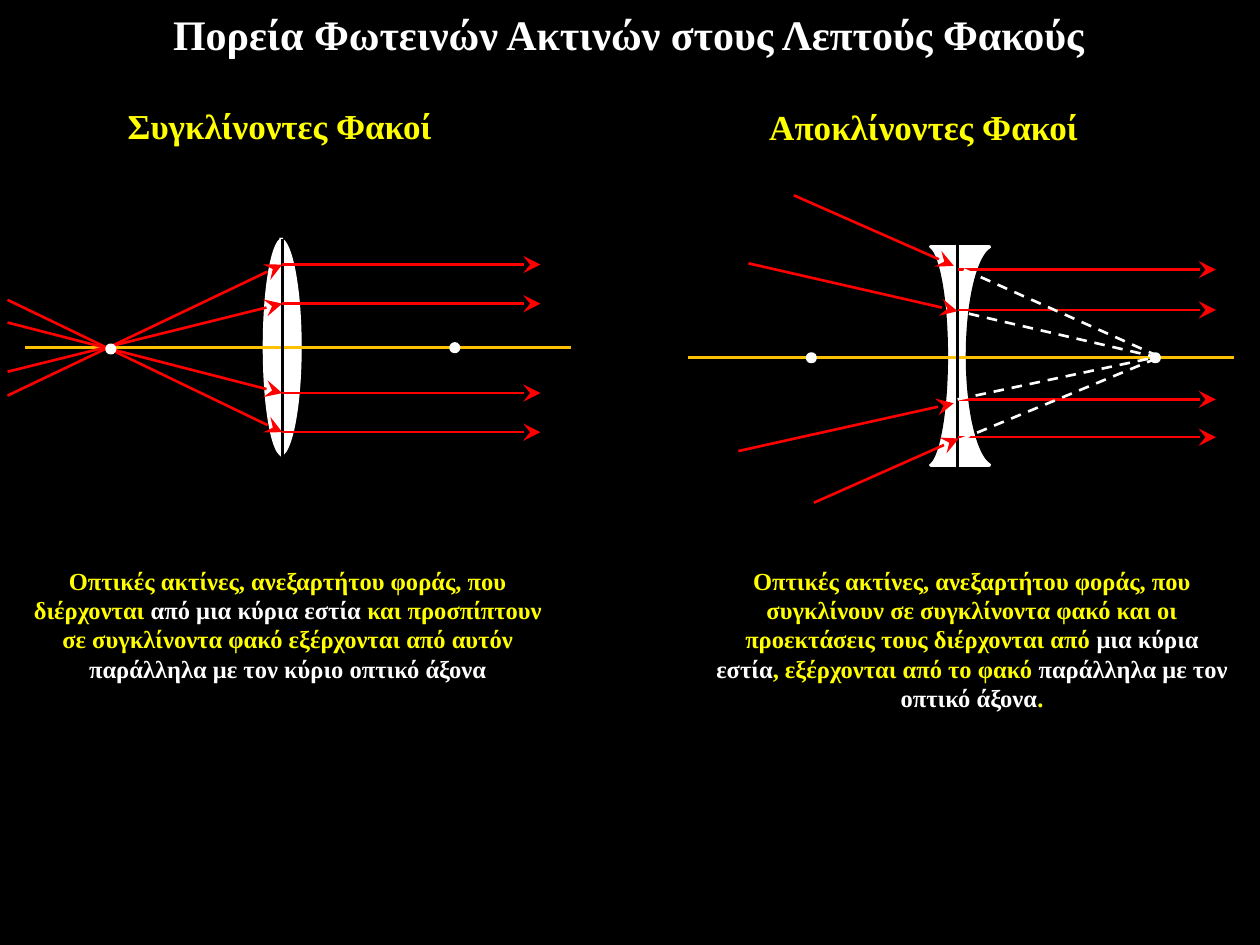
from pptx import Presentation
from pptx.dml.color import RGBColor as Rgb
from pptx.enum.dml import MSO_LINE as Dash
from pptx.enum.shapes import MSO_CONNECTOR as Link, MSO_SHAPE as Kind
from pptx.enum.text import MSO_ANCHOR as Anchor, PP_ALIGN as Align
from pptx.oxml.ns import qn
from pptx.util import Inches, Pt
from lxml.etree import SubElement

HUES = {"black": "000000", "white": "FFFFFF", "yellow": "FFFF00",
        "amber": "FFC000", "red": "FF0000"}
FONT = "Times New Roman"


def hue(name):
    """Return the named colour."""
    return Rgb.from_string(HUES[name])


def write(shape, *runs, size, align=Align.CENTER):
    """Fill a shape with bold (text, colour) runs."""
    frame = shape.text_frame
    frame.word_wrap = True
    frame.vertical_anchor = Anchor.TOP
    para = frame.paragraphs[0]
    para.alignment = align
    for text, color in runs:
        run = para.add_run()
        run.text = text
        font = run.font
        font.name, font.size, font.bold = FONT, Pt(size), True
        font.color.rgb = hue(color)


class Panel:
    """A region of the slide whose parts are placed from its top left corner."""

    def __init__(self, slide, left, top):
        """Keep the slide's shapes and the corner in inches."""
        self.shapes, self.left, self.top = slide.shapes, left, top

    def spot(self, x, y):
        """Turn a point of the panel into slide lengths."""
        return Inches(self.left + x), Inches(self.top + y)

    def label(self, x, y, wide, high, *runs, size):
        """Add a wrapped text box."""
        box = self.shapes.add_textbox(*self.spot(x, y), Inches(wide), Inches(high))
        write(box, *runs, size=size)

    def solid(self, kind, x, y, wide, high, color, line):
        """Add a preset shape in one plain colour."""
        shape = self.shapes.add_shape(kind, *self.spot(x, y), Inches(wide), Inches(high))
        shape.shadow.inherit = False
        shape.fill.solid()
        shape.fill.fore_color.rgb = shape.line.color.rgb = hue(color)
        shape.line.width = Pt(line)
        return shape

    def arc(self, x, y, wide, color, flip=False):
        """Add a filled half ellipse that bulges right, or left if flipped."""
        shape = self.solid(Kind.ARC, x, y, wide, 1.73, color, 0.75)
        shape.adjustments[0], shape.adjustments[1] = 162, 53.74
        if flip:
            shape._element.spPr.find(qn("a:xfrm")).set("flipH", "1")

    def focus(self, x, y):
        """Add a focal point centred on a spot."""
        self.solid(Kind.OVAL, x - 0.03, y - 0.03, 0.06, 0.06, "white", 2)

    def line(self, start, end, color, dash=False, tip=False):
        """Add a straight line, with an arrow tip at its start if asked."""
        link = self.shapes.add_connector(
            Link.STRAIGHT, *self.spot(*start), *self.spot(*end))
        link.line.color.rgb = hue(color)
        link.line.width = Pt(1.5)
        if dash:
            link.line.dash_style = Dash.DASH
        props = link._element.spPr
        if tip:
            SubElement(props.find(qn("a:ln")), qn("a:headEnd"),
                       type="stealth", w="lg", len="lg")
        SubElement(props, qn("a:effectLst"))

    def ray(self, tip, tail):
        """Add a red light ray that travels from tail to tip."""
        self.line(tip, tail, "red", tip=True)


def converge(slide, left, top):
    """Draw the converging lens panel."""
    panel = Panel(slide, left, top)
    panel.arc(2.05, 1.14, 0.34, "white")
    panel.arc(2.09, 1.14, 0.31, "white", flip=True)
    panel.line((0.2, 2.01), (4.53, 2.01), "amber")
    panel.line((2.24, 1.15), (2.24, 2.88), "black")
    panel.focus(3.61, 2.01)
    panel.label(0.12, 3.69, 4.33, 1.04,
                ("Οπτικές ακτίνες, ανεξαρτήτου φοράς, που διέρχονται ", "yellow"),
                ("από μια κύρια εστία ", "white"),
                ("και προσπίπτουν σε συγκλίνοντα φακό εξέρχονται από αυτόν ", "yellow"),
                ("παράλληλα με τον κύριο οπτικό άξονα", "white"), size=14)
    panel.label(0.83, 0.03, 2.78, 0.44, ("Συγκλίνοντες Φακοί", "yellow"), size=20)
    for y, tail in ((1.35, 2.39), (1.66, 2.2), (2.37, 1.81), (2.68, 1.63)):
        panel.ray((4.29, y), (2.24, y))
        panel.ray((2.24, y), (0.06, tail))
    panel.focus(0.88, 2.02)


def diverge(slide, left, top):
    """Draw the diverging lens panel."""
    panel = Panel(slide, left, top)
    panel.solid(Kind.RECTANGLE, 1.99, 1.21, 0.46, 1.73, "white", 2)
    panel.arc(1.78, 1.21, 0.34, "black")
    panel.arc(2.27, 1.21, 0.47, "black", flip=True)
    panel.line((0.06, 2.09), (4.39, 2.09), "amber")
    panel.line((2.2, 1.19), (2.2, 2.96), "black")
    for x in (1.04, 3.77):
        panel.focus(x, 2.09)
    panel.label(0.54, 0.04, 2.78, 0.44, ("Αποκλίνοντες Φακοί", "yellow"), size=20)
    panel.label(0.15, 3.69, 4.33, 1.28,
                ("Οπτικές ακτίνες, ανεξαρτήτου φοράς, που συγκλίνουν σε συγκλίνοντα "
                 "φακό και οι προεκτάσεις τους διέρχονται από ", "yellow"),
                ("μια κύρια εστία", "white"),
                (", εξέρχονται από το φακό ", "yellow"),
                ("παράλληλα με τον οπτικό άξονα", "white"),
                (".", "yellow"), size=14)
    for y in (1.39, 1.71, 2.42, 2.72):
        panel.ray((4.25, y), (2.2, y))
    for tip, tail in (((2.17, 1.36), (0.9, 0.8)), ((2.2, 1.72), (0.54, 1.34)),
                      ((2.21, 2.73), (1.06, 3.24)), ((2.17, 2.45), (0.46, 2.83))):
        panel.ray(tip, tail)
    for start, end in (((2.25, 1.39), (3.8, 2.08)), ((2.22, 2.74), (3.79, 2.09)),
                       ((2.29, 1.74), (3.76, 2.08)), ((2.2, 2.42), (3.75, 2.09))):
        panel.line(start, end, "white", dash=True)


def head(slide):
    """Place the slide title."""
    title = slide.shapes.title
    title.left, title.top = Inches(-0.01), Inches(0.02)
    title.width, title.height = Inches(10), Inches(0.47)
    write(title, ("Πορεία Φωτεινών Ακτινών στους Λεπτούς Φακούς", "white"), size=24)


def main():
    """Build and save the slide."""
    deck = Presentation()
    deck.slide_width, deck.slide_height = Inches(10), Inches(7.5)
    slide = deck.slides.add_slide(deck.slide_layouts[5])
    back = slide.background.fill
    back.solid()
    back.fore_color.rgb = hue("black")
    head(slide)
    diverge(slide, 5.4, 0.75)
    converge(slide, 0, 0.75)
    deck.save("out.pptx")


if __name__ == "__main__":
    main()
